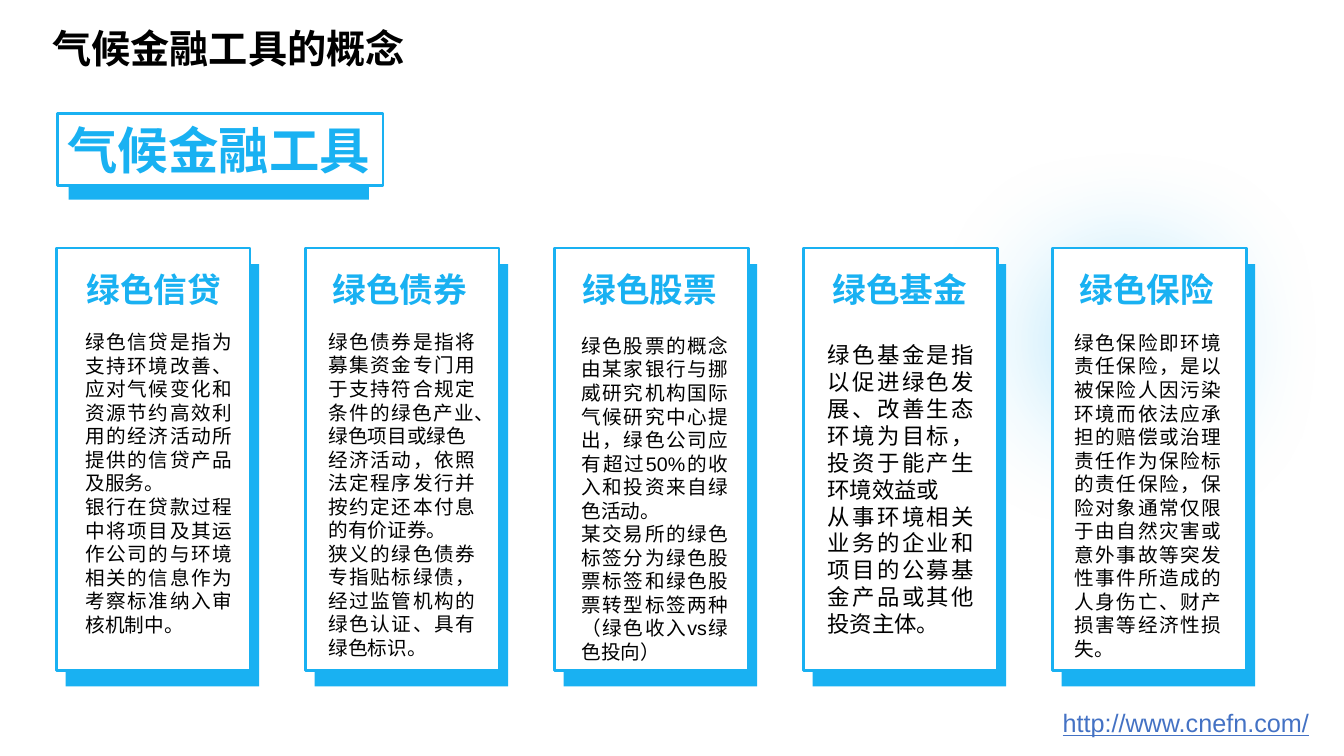
import pptx
import pptx.util
import pptx.dml.color
import pptx.enum.shapes
import pptx.enum.text
import pptx.oxml
import pptx.oxml.ns
import lxml.etree

Inches = pptx.util.Inches
KIND = pptx.enum.shapes.MSO_SHAPE
ALIGN = pptx.enum.text.PP_ALIGN
ANCHOR = pptx.enum.text.MSO_ANCHOR
BLUE, WHITE, BLACK, LINK = "19B1F2", "FFFFFF", "000000", "4472C4"

prs = pptx.Presentation()
prs.slide_width, prs.slide_height = Inches(13.33), Inches(7.5)
slide = prs.slides.add_slide(prs.slide_layouts[6])


def block(box, fill, line=None, kind=KIND.RECTANGLE):
    shape = slide.shapes.add_shape(kind, *map(Inches, box))
    shape.shadow.inherit = False
    shape.fill.solid()
    shape.fill.fore_color.rgb = pptx.dml.color.RGBColor.from_string(fill)
    if line:
        shape.line.color.rgb = pptx.dml.color.RGBColor.from_string(line)
        shape.line.width = pptx.util.Pt(2)
    else:
        shape.line.fill.background()
    return shape


def write(shape, lines, size, color, bold=False, align=ALIGN.LEFT,
          anchor=ANCHOR.BOTTOM, wrap=True):
    frame = shape.text_frame
    frame.word_wrap = wrap
    frame.vertical_anchor = anchor
    frame.text = "\n".join(lines)
    for para in frame.paragraphs:
        para.alignment = align
        para.font.name = "Arial"
        para.font.size = pptx.util.Pt(size)
        para.font.bold = bold
        para.font.color.rgb = pptx.dml.color.RGBColor.from_string(color)


# Page title and web address
title = slide.shapes.add_textbox(*map(Inches, (0.42, 0.15, 8.21, 0.61)))
write(title, ["气候金融工具的概念"], 28, BLACK, bold=True)
site = slide.shapes.add_textbox(*map(Inches, (10.44, 6.97, 2.74, 0.4)))
write(site, ["http://www.cnefn.com/"], 18, LINK, anchor=ANCHOR.TOP, wrap=False)
site.text_frame.paragraphs[0].font.underline = True

# Soft glow behind the cards
glow = block((8.62, 0.82, 5.13, 5.13), BLUE, kind=KIND.OVAL)
qn = pptx.oxml.ns.qn
tint = glow.fill._xPr.find(qn("a:solidFill"))[0]
lxml.etree.SubElement(tint, qn("a:alpha"), val="60000")
effects = glow._element.spPr.find(qn("a:effectLst"))
lxml.etree.SubElement(effects, qn("a:softEdge"), rad="1270000")

# Heading
block((0.68, 1.27, 2.98, 0.71), BLUE)
head = block((0.57, 1.13, 3.23, 0.71), WHITE, BLUE)
write(head, ["气候金融工具"], 36, BLUE, bold=True, anchor=ANCHOR.TOP, wrap=False)

# Cards: name, its left; text left, top, height, size; paragraphs
cards = [
    ("绿色信贷", 0.75, 0.75, 3.2, 3.16, 14, [
        "绿色信贷是指为支持环境改善、应对气候变化和资源节约高效利用的经济活动所提供的信贷产品及服务。",
        "银行在贷款过程中将项目及其运作公司的与环境相关的信息作为考察标准纳入审核机制中。"]),
    ("绿色债券", 3.19, 3.16, 3.19, 3.4, 14, [
        "绿色债券是指将募集资金专门用于支持符合规定条件的绿色产业、绿色项目或绿色",
        "经济活动，依照法定程序发行并按约定还本付息的有价证券。",
        "狭义的绿色债券专指贴标绿债，经过监管机构的绿色认证、具有绿色标识。"]),
    ("绿色股票", 5.67, 5.67, 3.23, 3.4, 14, [
        "绿色股票的概念由某家银行与挪威研究机构国际气候研究中心提出，绿色公司应有超过50%的收入和投资来自绿色活动。",
        "某交易所的绿色标签分为绿色股票标签和绿色股票转型标签两种（绿色收入vs绿色投向）"]),
    ("绿色基金", 8.15, 8.11, 3.31, 3.06, 16, [
        "绿色基金是指以促进绿色发展、改善生态环境为目标，投资于能产生环境效益或",
        "从事环境相关业务的企业和项目的公募基金产品或其他投资主体。"]),
    ("绿色保险", 10.6, 10.56, 3.2, 3.4, 14, [
        "绿色保险即环境责任保险，是以被保险人因污染环境而依法应承担的赔偿或治理责任作为保险标的责任保险，"
        "保险对象通常仅限于由自然灾害或意外事故等突发性事件所造成的人身伤亡、财产损害等经济性损失。"]),
]
for i, (name, left, edge, top, high, size, lines) in enumerate(cards):
    x = 0.56 + 2.47 * i
    block((x + 0.09, 2.62, 1.92, 4.19), BLUE)
    block((x, 2.46, 1.92, 4.19), WHITE, BLUE)
    label = block((left, 2.62, 1.55, 0.5), WHITE)
    write(label, [name], 24, BLUE, bold=True, align=ALIGN.CENTER, wrap=False)
    body = block((edge, top, 1.65, high), WHITE)
    write(body, lines, size, BLACK, align=ALIGN.JUSTIFY)

prs.save("out.pptx")
